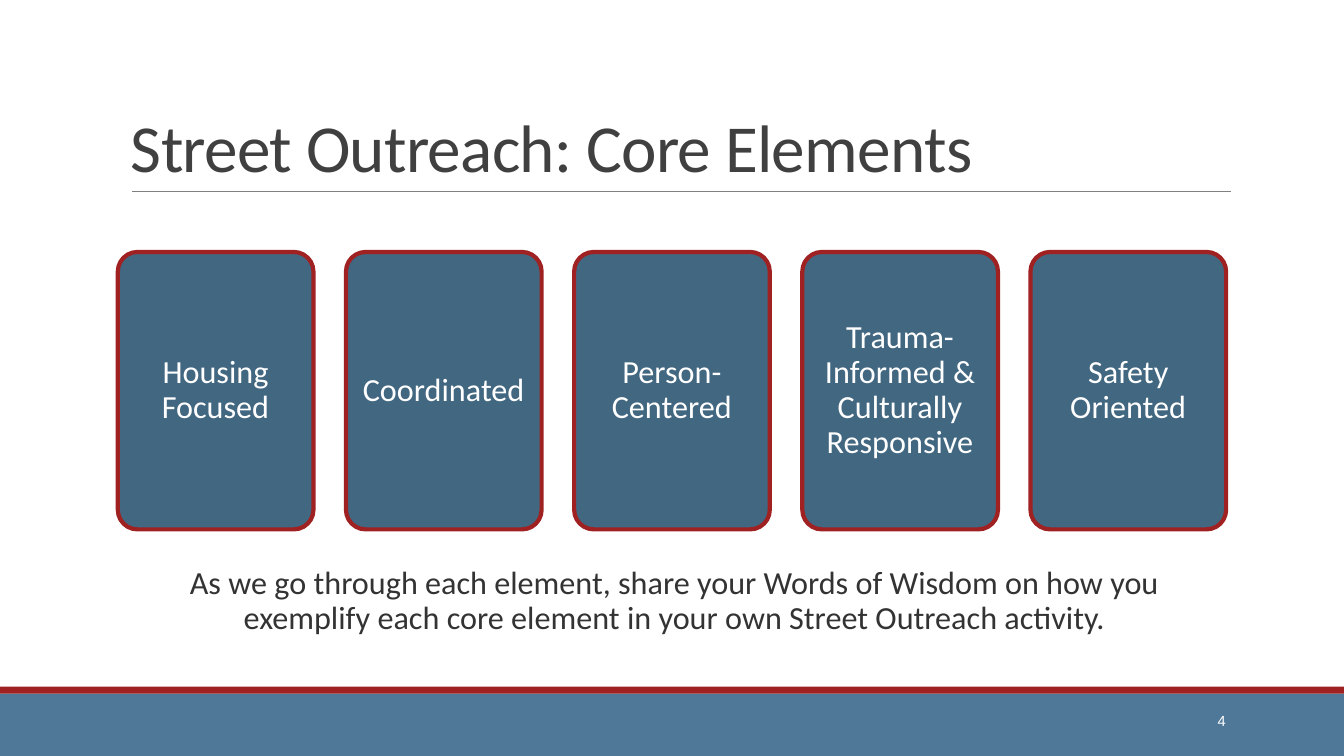
from pptx import Presentation
from pptx.dml.color import RGBColor
from pptx.enum.shapes import MSO_CONNECTOR, MSO_SHAPE
from pptx.enum.text import MSO_ANCHOR, PP_ALIGN
from pptx.oxml.ns import qn
from pptx.util import Cm, Pt
from lxml.etree import SubElement

TITLE = "Street Outreach: Core Elements"
ELEMENTS = [
    "Housing Focused",
    "Coordinated",
    "Person-Centered",
    "Trauma-Informed & Culturally Responsive",
    "Safety Oriented",
]
PROMPT = ("As we go through each element, share your Words of Wisdom on how you "
          "exemplify each core element in your own Street Outreach activity.")
PAGE_NUMBER = "4"

RED, BAND_BLUE, CARD_BLUE = "9F2122", "4F7898", "426781"

# Lengths in centimetres
SLIDE_WIDTH, SLIDE_HEIGHT = 33.87, 19.05
RULE_LEFT, RULE_RIGHT, RULE_TOP = 3.33, 31.01, 4.83
CARD_LEFT, CARD_TOP, CARD_WIDTH, CARD_HEIGHT, CARD_GAP = 2.97, 6.35, 4.93, 6.99, 0.82
STRIPE_TOP, BAND_TOP = 17.3, 17.48

TITLE_FORMAT = {"name": "Calibri", "size": Pt(48)}
BODY_FORMAT = {"name": "Calibri", "size": Pt(23)}
NUMBER_FORMAT = {"name": "Arial", "size": Pt(10.5)}


def rgb(value):
    return RGBColor.from_string(value)


def write(shape, text, formats, color, align, anchor=MSO_ANCHOR.MIDDLE,
          line_spacing=1.0, insets=(0.25, 0.13)):
    """Fill the shape with one paragraph and return its run."""
    frame = shape.text_frame
    side, edge = map(Cm, insets)
    frame_format = {
        "word_wrap": True, "vertical_anchor": anchor,
        "margin_left": side, "margin_right": side,
        "margin_top": edge, "margin_bottom": edge,
    }
    for key, value in frame_format.items():
        setattr(frame, key, value)
    paragraph = frame.paragraphs[0]
    paragraph.alignment = align
    paragraph.line_spacing = line_spacing
    run = paragraph.add_run()
    run.text = text
    for key, value in formats.items():
        setattr(run.font, key, value)
    run.font.color.rgb = rgb(color)
    return run


def add_text_box(slide, box):
    return slide.shapes.add_textbox(*map(Cm, box))


def add_filled(slide, kind, box, fill, outline=None):
    shape = slide.shapes.add_shape(kind, *map(Cm, box))
    shape.shadow.inherit = False
    shape.fill.solid()
    shape.fill.fore_color.rgb = rgb(fill)
    if outline:
        shape.line.color.rgb = rgb(outline)
        shape.line.width = Pt(3)
    else:
        shape.line.fill.background()
    return shape


def add_title(slide):
    rule = slide.shapes.add_connector(
        MSO_CONNECTOR.STRAIGHT,
        *map(Cm, (RULE_LEFT, RULE_TOP, RULE_RIGHT, RULE_TOP)))
    rule.line.color.rgb = rgb("808080")
    rule.line.width = Pt(0.5)
    SubElement(rule._element.spPr, qn("a:effectLst"))
    title = add_text_box(slide, (3.05, 0.79, 27.94, 4.04))
    run = write(title, TITLE, TITLE_FORMAT, "404040", PP_ALIGN.LEFT,
                MSO_ANCHOR.BOTTOM, 0.85)
    run._r.get_or_add_rPr().set("spc", "-50")


def add_cards(slide):
    for index, element in enumerate(ELEMENTS):
        left = CARD_LEFT + index * (CARD_WIDTH + CARD_GAP)
        card = add_filled(slide, MSO_SHAPE.ROUNDED_RECTANGLE,
                          (left, CARD_TOP, CARD_WIDTH, CARD_HEIGHT), CARD_BLUE, RED)
        card.adjustments[0] = 0.1
        write(card, element, BODY_FORMAT, "FFFFFF", PP_ALIGN.CENTER,
              line_spacing=0.9, insets=(0.25, 0.25))


def add_footer(slide):
    for top, bottom, fill in ((BAND_TOP, SLIDE_HEIGHT, BAND_BLUE),
                              (STRIPE_TOP, BAND_TOP, RED)):
        add_filled(slide, MSO_SHAPE.RECTANGLE,
                   (0, top, SLIDE_WIDTH, bottom - top), fill)
    number = add_text_box(slide, (27.51, 17.65, 3.63, 1.02))
    write(number, PAGE_NUMBER, NUMBER_FORMAT, "FFFFFF", PP_ALIGN.RIGHT)


def main():
    deck = Presentation()
    deck.slide_width, deck.slide_height = Cm(SLIDE_WIDTH), Cm(SLIDE_HEIGHT)
    slide = deck.slides.add_slide(deck.slide_layouts[6])
    add_footer(slide)
    add_title(slide)
    add_cards(slide)
    prompt = add_text_box(slide, (3.78, 13.77, 26.47, 2.77))
    write(prompt, PROMPT, BODY_FORMAT, "333333", PP_ALIGN.CENTER,
          line_spacing=0.9, insets=(0, 0.13))
    deck.save("out.pptx")


if __name__ == "__main__":
    main()
